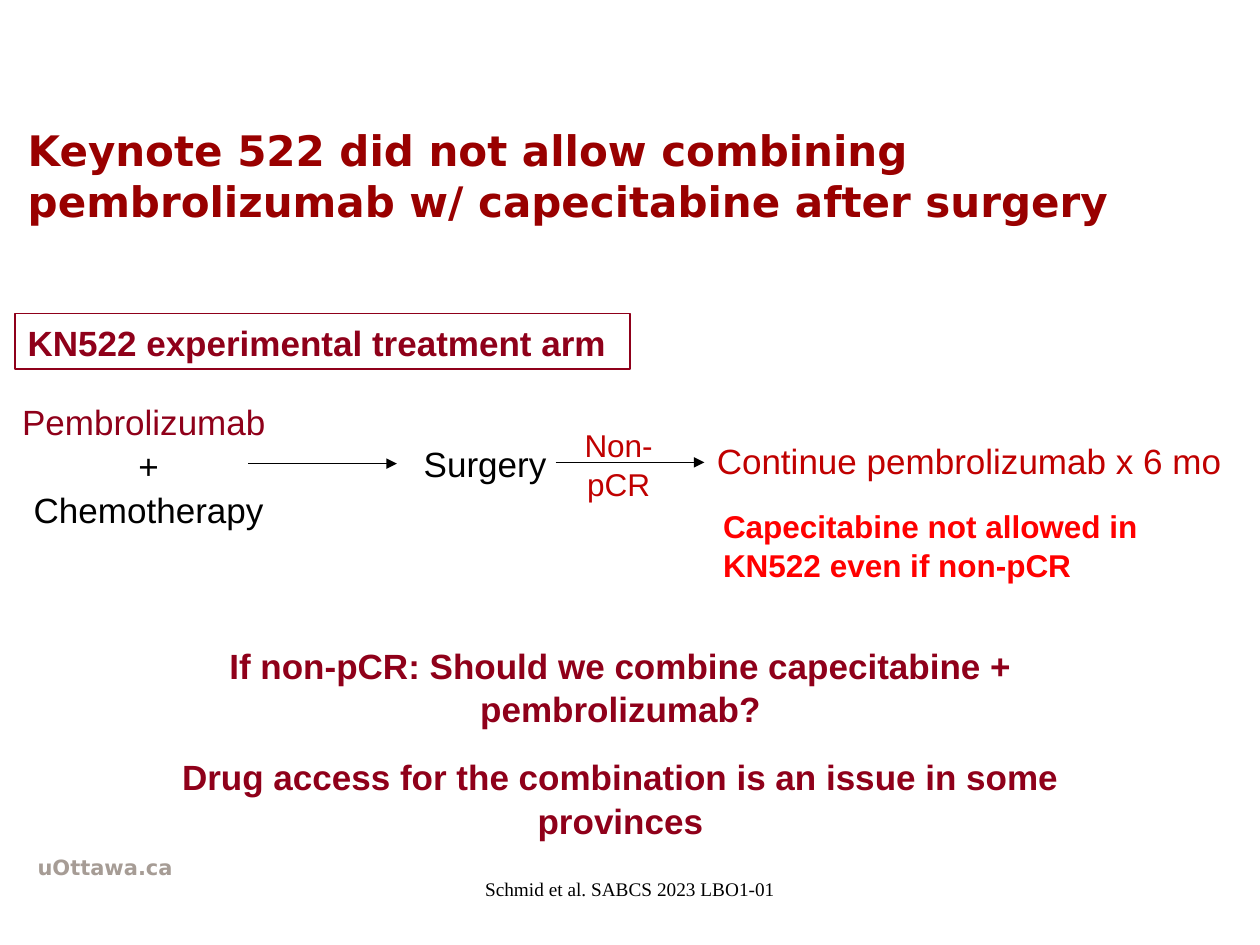
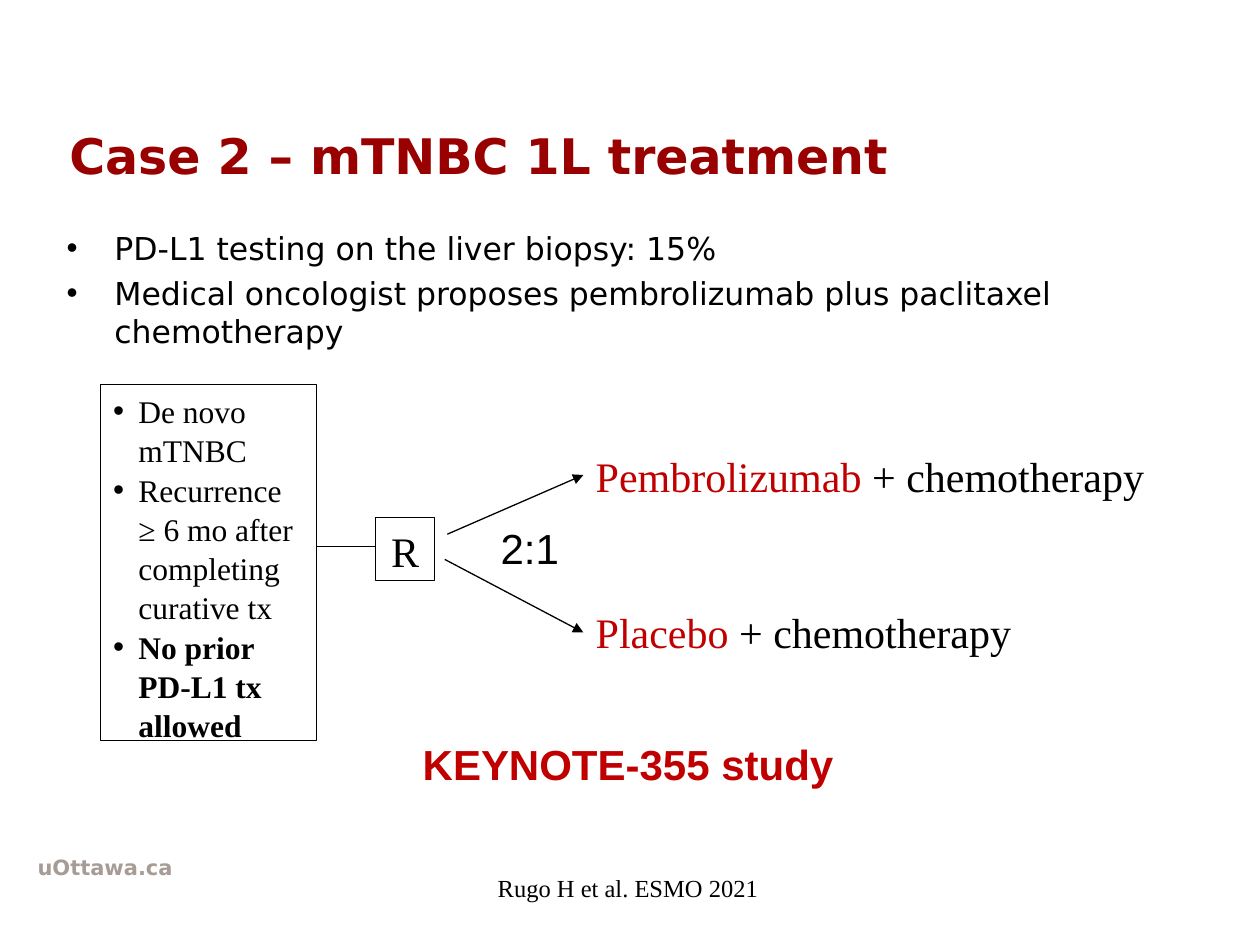
from lxml import etree
from pptx import Presentation
from pptx import util as u
from pptx.dml.color import RGBColor
from pptx.enum import shapes, text
from pptx.oxml.ns import qn

PX = 9144
COLORS = {
    "title": "990000",
    "garnet": "8F001A",
    "drug": "C00000",
    "alert": "FF0000",
    "footer": "A69C95",
    "ink": "000000",
    "white": "FFFFFF",
}
SANS, SERIF, BRAND = "Arial", "Times New Roman", "DejaVu Sans"
LEADING = 1.04
LEFT, CENTER = text.PP_ALIGN.LEFT, text.PP_ALIGN.CENTER


def px(*values):
    return [u.Emu(v * PX) for v in values]


def rgb(name):
    return RGBColor.from_string(COLORS[name])


def style_run(r, size, font, color, bold=False):
    r.font.size = u.Pt(size)
    r.font.name = font
    r.font.bold = bold
    r.font.color.rgb = rgb(color)


def add_bullet(p, indent):
    pPr = p._p.get_or_add_pPr()
    pPr.set("marL", str(indent * PX))
    pPr.set("indent", str(-indent * PX))
    etree.SubElement(pPr, qn("a:buFont")).set("typeface", "Arial")
    etree.SubElement(pPr, qn("a:buChar")).set("char", "•")


def write(sp, paragraphs, size, font, color="ink", bold=False, align=LEFT,
          indent=0, gap=0, leading=LEADING):
    tf = sp.text_frame
    tf.word_wrap = True
    tf.vertical_anchor = text.MSO_ANCHOR.TOP
    for i, runs in enumerate(paragraphs):
        p = tf.paragraphs[0] if i == 0 else tf.add_paragraph()
        if indent:
            add_bullet(p, indent)
        p.alignment = align
        p.line_spacing = leading
        if i and gap:
            p.space_before = u.Pt(gap)
        for words, changes in runs:
            r = p.add_run()
            r.text = words
            look = {"size": size, "font": font, "color": color, "bold": bold}
            style_run(r, **{**look, **changes})


def plain(*lines):
    return [[(line, {})] for line in lines]


def add_text(s, box, paragraphs, size, font, **look):
    sp = s.shapes.add_textbox(*px(*box))
    write(sp, paragraphs, size, font, **look)


def add_box(s, box, paragraphs, size, font, line=None, fill=None, **look):
    sp = s.shapes.add_shape(shapes.MSO_SHAPE.RECTANGLE, *px(*box))
    sp.shadow.inherit = False
    if fill:
        sp.fill.solid()
        sp.fill.fore_color.rgb = rgb(fill)
    else:
        sp.fill.background()
    if line:
        sp.line.color.rgb = rgb(line)
        sp.line.width = u.Pt(0.75)
    else:
        sp.line.fill.background()
    write(sp, paragraphs, size, font, **look)


def add_line(s, x1, y1, x2, y2, arrow=True):
    c = s.shapes.add_connector(shapes.MSO_CONNECTOR.STRAIGHT, *px(x1, y1, x2, y2))
    c.line.color.rgb = rgb("ink")
    c.line.width = u.Pt(0.75)
    if arrow:
        etree.SubElement(c.line._get_or_add_ln(), qn("a:tailEnd")).set("type", "triangle")
    etree.SubElement(c._element.spPr, qn("a:effectLst"))


def new_slide(prs, title, box, size):
    s = prs.slides.add_slide(prs.slide_layouts[5])
    sp = s.shapes.title
    sp.left, sp.top, sp.width, sp.height = px(*box)
    tf = sp.text_frame
    tf.text = title
    tf.word_wrap = True
    tf.auto_size = text.MSO_AUTO_SIZE.NONE
    tf.vertical_anchor = text.MSO_ANCHOR.MIDDLE
    p = tf.paragraphs[0]
    p.alignment = LEFT
    style_run(p.runs[0], size, BRAND, "title", True)
    add_text(s, (20, 673, 496, 39), plain("uOttawa.ca"), 12, BRAND,
             color="footer", bold=True, leading=1)
    return s


def treatment_flow(s, x, y):
    regimen = [[("Pembrolizumab ", {"color": "garnet"})]] + plain("+", "Chemotherapy")
    add_text(s, (x, y, 228, 111), regimen, 20, SANS, align=CENTER)
    add_line(s, x + 193, y + 56, x + 311, y + 56)
    add_text(s, (x + 310, y + 33, 142, 44), plain("Surgery"), 20, SANS, align=CENTER)
    add_text(s, (x + 555, y + 31, 445, 44), plain("Continue pembrolizumab x 6 mo"),
             20, SANS, color="drug")
    add_line(s, x + 437, y + 55, x + 555, y + 55)
    add_box(s, (x + 560, y + 84, 424, 71),
            plain("Capecitabine not allowed in KN522 even if non-pCR"),
            18, SANS, fill="white", color="alert", bold=True)
    add_text(s, (x + 435, y + 20, 104, 71), plain("Non-pCR"), 18, SANS,
             color="drug", align=CENTER)


def randomisation(s, x, y):
    eligibility = plain("De novo mTNBC", "Recurrence ≥ 6 mo after completing curative tx")
    eligibility.append([("No prior PD-L1 tx allowed", {"bold": True})])
    add_box(s, (x, y, 171, 283), eligibility, 18, SERIF, line="ink", indent=20)
    add_line(s, x + 171, y + 129, x + 218, y + 129, arrow=False)
    add_box(s, (x + 218, y + 106, 47, 50), plain("R"), 24, SERIF,
            line="ink", align=CENTER)
    add_text(s, (x + 301, y + 103, 79, 50), plain("2:1"), 24, SANS, align=CENTER)
    arms = [("Pembrolizumab", 275, 119, 72, 46), ("Placebo", 273, 139, 197, 170)]
    for drug, start_x, start_y, end_y, label_y in arms:
        add_line(s, x + start_x, y + start_y, x + 383, y + end_y)
        add_text(s, (x + 383, y + label_y, 457, 50),
                 [[(drug, {"color": "drug"}), (" + chemotherapy", {})]], 24, SERIF)


def keynote_522_slide(prs):
    s = new_slide(prs, "Keynote 522 did not allow combining pembrolizumab "
                  "w/ capecitabine after surgery", (12, 92, 976, 94), 24)
    add_box(s, (12, 249, 488, 44), plain("KN522 experimental treatment arm"),
            20, SANS, line="garnet", color="garnet", bold=True)
    treatment_flow(s, 4, 312)
    add_text(s, (91, 505, 803, 163),
             plain("If non-pCR: Should we combine capecitabine + pembrolizumab?",
                   "Drug access for the combination is an issue in some provinces"),
             20, SANS, color="garnet", bold=True, align=CENTER, gap=14)
    add_text(s, (323, 691, 354, 29), plain("Schmid et al. SABCS 2023 LBO1-01"),
             11, SERIF, align=CENTER)


def case_2_slide(prs):
    s = new_slide(prs, "Case 2 – mTNBC 1L treatment", (45, 76, 850, 94), 28)
    add_text(s, (43, 177, 912, 100),
             plain("PD-L1 testing on the liver biopsy: 15%",
                   "Medical oncologist proposes pembrolizumab plus paclitaxel chemotherapy"),
             18, BRAND, indent=38, gap=4, leading=1)
    randomisation(s, 80, 305)
    citation = {"size": 14, "font": SERIF, "color": "ink", "bold": False}
    add_text(s, (290, 580, 417, 141),
             [[("KEYNOTE-355 study", {})], [("Rugo H et al. ESMO 2021", citation)]],
             24, SANS, color="drug", bold=True, align=CENTER, gap=47)


def main():
    prs = Presentation()
    prs.slide_width, prs.slide_height = px(1000, 750)
    keynote_522_slide(prs)
    case_2_slide(prs)
    prs.save("out.pptx")


if __name__ == "__main__":
    main()
